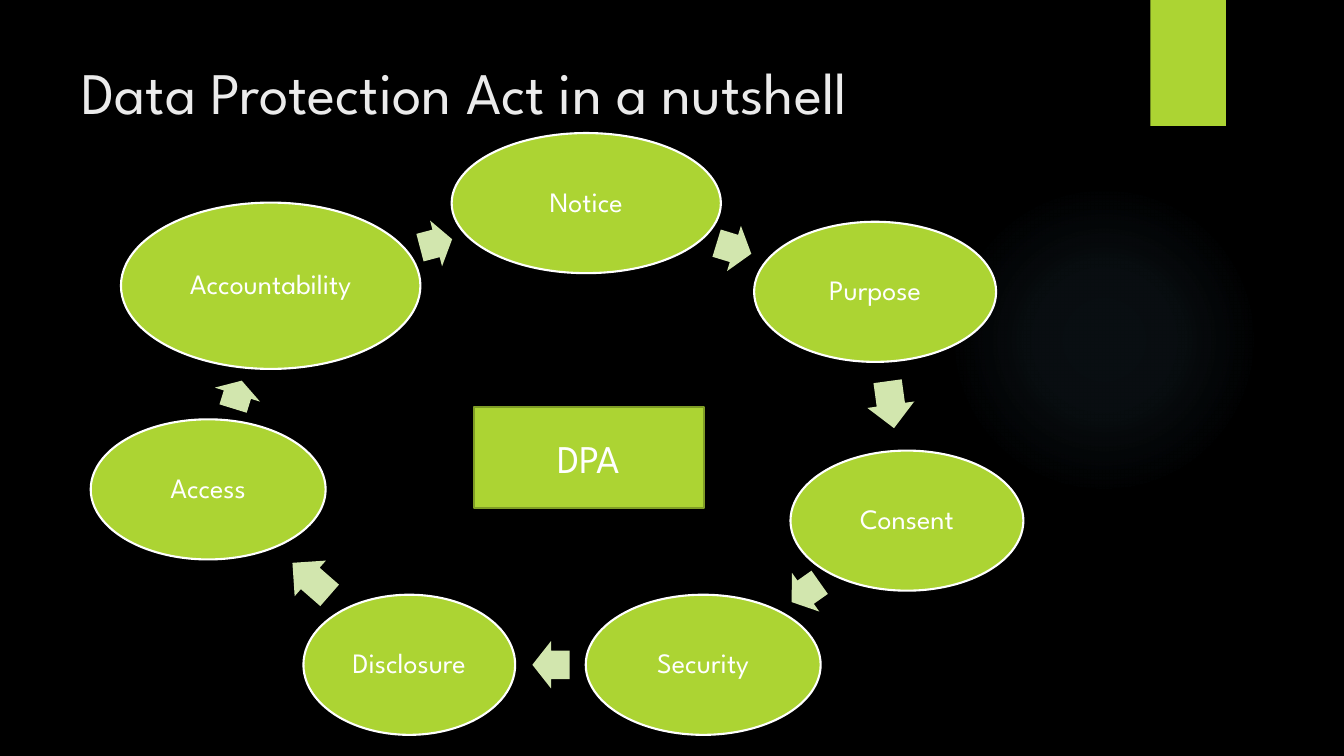
from lxml import etree
from pptx import Presentation
from pptx import util as u
from pptx.dml.color import RGBColor
from pptx.enum import shapes, text
from pptx.oxml import parse_xml
from pptx.oxml.ns import nsdecls

PX = 9144
THEME = {
    "font": "League Spartan",
    "back": "000000", "lime": "ACD433", "pale": "D2E6AE", "edge": "7F9D26",
    "white": "FFFFFF", "title": "EBEBEB", "glow": "7AC4F0", "shade": "000000",
    "head": 42, "core": 28, "node": 20, "rule": 1.5,
}
SIZE = (1333, 750)
TITLE = ("Data Protection Act in a nutshell", (71, 50, 1029, 97))
CORE = ("DPA", (470, 404, 228, 100))
GLOW = (941, 183, 308, 308)
TAB = (1141, 0, 75, 125)
STOPS = [(0, 7), (36, 6), (69, 0)]
STEPS = [
    ("Notice", (448, 132, 267, 139), (710, 223, 36, 47), 17),
    ("Purpose", (748, 220, 240, 139), (860, 378, 47, 47), 82.2),
    ("Consent", (784, 447, 231, 139), (782, 564, 34, 47), 144.8),
    ("Security", (581, 590, 233, 139), (528, 636, 37, 47), 180),
    ("Disclosure", (301, 590, 210, 139), (284, 551, 49, 47), 221.2),
    ("Access", (90, 416, 233, 139), (221, 368, 29, 47), 287.2),
    ("Accountability", (120, 201, 297, 165), (416, 218, 33, 47), 345.3),
]
KIND = shapes.MSO_SHAPE


def rgb(name):
    return RGBColor.from_string(THEME[name])


def place(box):
    return [n * PX for n in box]


def draw(slide, kind, box, fill, line=None):
    shape = slide.shapes.add_shape(kind, *place(box))
    shape.shadow.inherit = False
    shape.fill.solid()
    shape.fill.fore_color.rgb = rgb(fill)
    if line:
        shape.line.color.rgb = rgb(line)
        shape.line.width = u.Pt(THEME["rule"])
    else:
        shape.line.fill.background()
    return shape


def write(shape, words, size, color, align, anchor):
    frame = shape.text_frame
    frame.word_wrap = True
    frame.vertical_anchor = anchor
    para = frame.paragraphs[0]
    para.alignment = align
    run = para.add_run()
    run.text = words
    run.font.name = THEME["font"]
    run.font.size = u.Pt(THEME[size])
    run.font.color.rgb = rgb(color)
    return frame


def label(shape, words, size):
    return write(shape, words, size, "white", text.PP_ALIGN.CENTER,
                 text.MSO_ANCHOR.MIDDLE)


def add_glow(slide):
    shape = draw(slide, KIND.OVAL, GLOW, "glow")
    stops = "".join(
        f'<a:gs pos="{pos * 1000}"><a:srgbClr val="{THEME["glow"]}">'
        f'<a:alpha val="{alpha * 1000}"/></a:srgbClr></a:gs>'
        for pos, alpha in STOPS)
    grad = parse_xml(
        f'<a:gradFill {nsdecls("a")}><a:gsLst>{stops}</a:gsLst>'
        '<a:path path="circle"><a:fillToRect l="50000" t="50000" '
        'r="50000" b="50000"/></a:path></a:gradFill>')
    props = shape.element.spPr
    props.replace(props.find("{*}solidFill"), grad)


def add_tab(slide):
    shape = draw(slide, KIND.RECTANGLE, TAB, "lime")
    shade = parse_xml(
        f'<a:outerShdw {nsdecls("a")} blurRad="{u.Pt(3)}" dist="{u.Pt(2)}" '
        f'dir="5400000" rotWithShape="0"><a:srgbClr val="{THEME["shade"]}">'
        '<a:alpha val="45000"/></a:srgbClr></a:outerShdw>')
    shape.element.spPr.find("{*}effectLst").append(shade)


def add_step(slide, name, oval, arrow, turn):
    node = draw(slide, KIND.OVAL, oval, "lime", "white")
    frame = label(node, name, "node")
    frame.margin_left = frame.margin_right = 3 * PX
    frame.margin_top = frame.margin_bottom = 3 * PX
    frame.paragraphs[0].line_spacing = 0.9
    tip = draw(slide, KIND.RIGHT_ARROW, arrow, "pale")
    tip.adjustments[0] = 0.6
    tip.adjustments[1] = 0.5
    tip.rotation = turn


def main():
    deck = Presentation()
    deck.slide_width, deck.slide_height = place(SIZE)
    slide = deck.slides.add_slide(deck.slide_layouts[6])
    slide.background.fill.solid()
    slide.background.fill.fore_color.rgb = rgb("back")
    add_glow(slide)
    add_tab(slide)
    words, box = TITLE
    head = slide.shapes.add_textbox(*place(box))
    write(head, words, "head", "title", text.PP_ALIGN.LEFT,
          text.MSO_ANCHOR.TOP)
    for step in STEPS:
        add_step(slide, *step)
    words, box = CORE
    label(draw(slide, KIND.RECTANGLE, box, "lime", "edge"), words, "core")
    deck.save("out.pptx")


if __name__ == "__main__":
    main()
